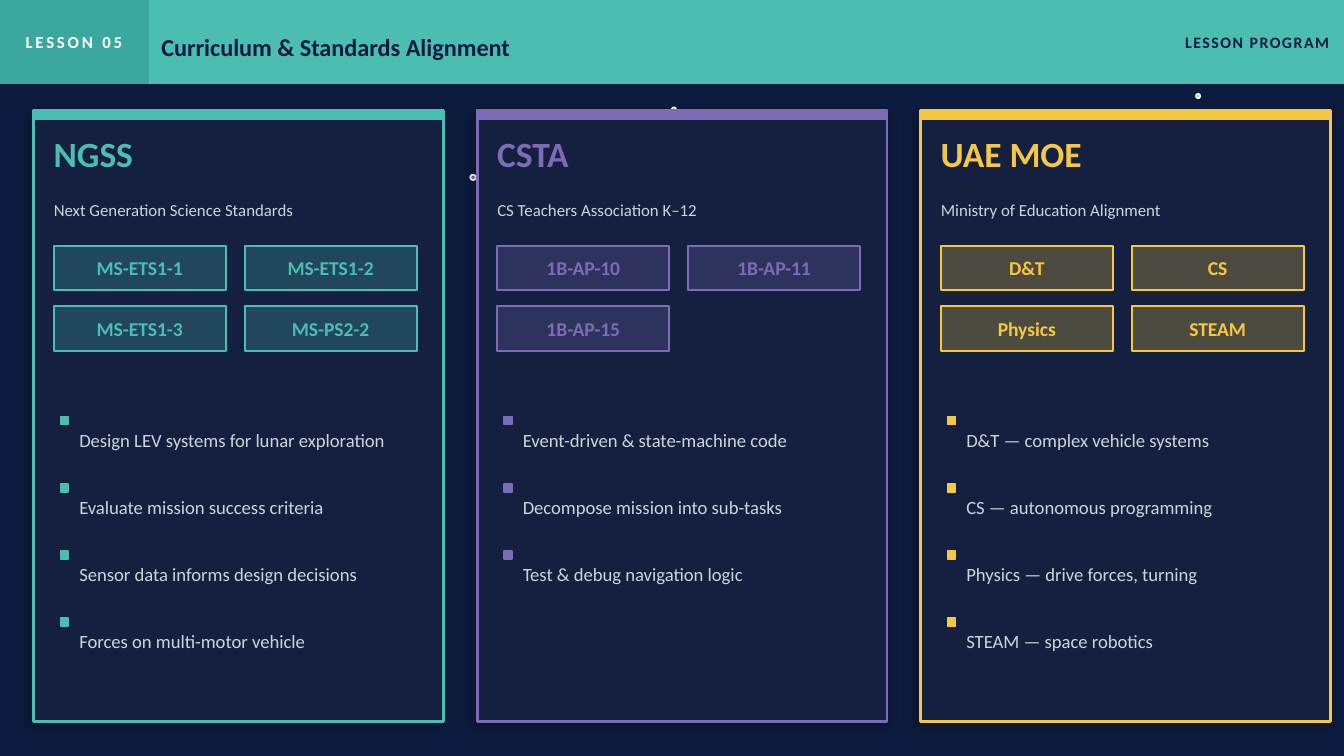
"""Build the curriculum and standards alignment slide."""
from lxml.etree import SubElement
from pptx import Presentation
from pptx.dml.color import RGBColor
from pptx.enum.shapes import MSO_SHAPE as Kind
from pptx.enum.text import MSO_ANCHOR as Anchor, MSO_AUTO_SIZE as Fit, PP_ALIGN as Align
from pptx.oxml.ns import qn
from pptx.util import Pt

PX = 914400 // 200
NAVY, PANEL, PALE, WHITE = "0D1B3E", "152040", "CBD5E1", "FFFFFF"
TEAL, DEEP, PLUM, GOLD = "4BBDB3", "3AA89E", "7B6CB5", "F5C842"
tint = RGBColor.from_string


def box(place, fill=None, edge=None, alpha=100, kind=Kind.RECTANGLE, width=1):
    """Add a filled shape, or a text box when no fill is given."""
    rect = [v * PX for v in place]
    if fill is None:
        return shapes.add_textbox(*rect)
    item = shapes.add_shape(kind, *rect)
    item.shadow.inherit = False
    item.fill.solid()
    item.fill.fore_color.rgb = tint(fill)
    if alpha < 100:
        color = item.element.spPr.find(qn("a:solidFill"))[0]
        SubElement(color, qn("a:alpha"), val=str(alpha * 1000))
    item.line.color.rgb = tint(edge or fill)
    item.line.width = Pt(width)
    return item


def write(item, text, size, color, bold=False, align=Align.LEFT, pad=(0, 0, 0, 0), track=0, lead=None):
    """Set one formatted line of text in a shape."""
    frame = item.text_frame
    frame.text = text
    frame.word_wrap = True
    frame.auto_size = Fit.NONE
    frame.vertical_anchor = Anchor.MIDDLE
    frame.margin_left, frame.margin_top, frame.margin_right, frame.margin_bottom = [v * PX for v in pad]
    line = frame.paragraphs[0]
    line.alignment = align
    line.line_spacing = lead
    run = line.runs[0]
    font = run.font
    font.name, font.size, font.bold = "Calibri", Pt(size), bold
    font.color.rgb = tint(color)
    if track:
        font._element.set("spc", str(track))


deck = Presentation()
deck.slide_width, deck.slide_height = 2000 * PX, 1125 * PX
slide = deck.slides.add_slide(deck.slide_layouts[5])
shapes = slide.shapes
slide.background.fill.solid()
slide.background.fill.fore_color.rgb = tint(NAVY)

for x, y, size, alpha in [(700, 260, 8, 40), (1000, 160, 6, 65), (1780, 140, 6, 60)]:
    box((x, y, size, size), WHITE, alpha=alpha, kind=Kind.OVAL)

box((0, 0, 2000, 124), TEAL)
tag = box((0, 0, 220, 124), DEEP)
write(tag, "LESSON 05", 9, WHITE, True, Align.CENTER, track=150)
title = shapes.title
shapes.element.append(title.element)
title.left, title.top, title.width, title.height = [v * PX for v in (240, 0, 1500, 124)]
write(title, "Curriculum & Standards Alignment", 13, NAVY, True, pad=(0, 16, 0, 0))
brand = box((1540, 0, 460, 124))
write(brand, "LESSON PROGRAM", 8.5, NAVY, True, Align.RIGHT, (0, 0, 22, 0), 80)

cards = [
    ("NGSS", "Next Generation Science Standards", TEAL,
     ["MS-ETS1-1", "MS-ETS1-2", "MS-ETS1-3", "MS-PS2-2"],
     ["Design LEV systems for lunar exploration", "Evaluate mission success criteria",
      "Sensor data informs design decisions", "Forces on multi-motor vehicle"]),
    ("CSTA", "CS Teachers Association K–12", PLUM,
     ["1B-AP-10", "1B-AP-11", "1B-AP-15"],
     ["Event-driven & state-machine code", "Decompose mission into sub-tasks",
      "Test & debug navigation logic"]),
    ("UAE MOE", "Ministry of Education Alignment", GOLD,
     ["D&T", "CS", "Physics", "STEAM"],
     ["D&T — complex vehicle systems", "CS — autonomous programming",
      "Physics — drive forces, turning", "STEAM — space robotics"]),
]

for col, (name, note, color, codes, goals) in enumerate(cards):
    x = 50 + col * 660
    card = box((x, 164, 610, 910), PANEL, color, width=1.5)
    glow = SubElement(card.element.spPr.find(qn("a:effectLst")), qn("a:outerShdw"),
                      blurRad=str(Pt(8)), dist=str(Pt(3)), dir="8100000", algn="bl", rotWithShape="0")
    shade = SubElement(glow, qn("a:srgbClr"), val="000000")
    SubElement(shade, qn("a:alpha"), val="25000")
    box((x, 164, 610, 14), color)
    write(box((x + 30, 186, 540, 84)), name, 19, color, True)
    write(box((x + 30, 274, 550, 76)), note, 9, PALE)
    for i, code in enumerate(codes):
        chip = box((x + 30 + i % 2 * 284, 366 + i // 2 * 90, 256, 66), color, alpha=25)
        write(chip, code, 10.5, color, True, Align.CENTER)
    for i, goal in enumerate(goals):
        y = 606 + i * 100
        box((x + 40, y + 14, 12, 12), color)
        write(box((x + 68, y, 520, 90)), goal, 10, PALE, lead=1.2)

deck.save("out.pptx")
